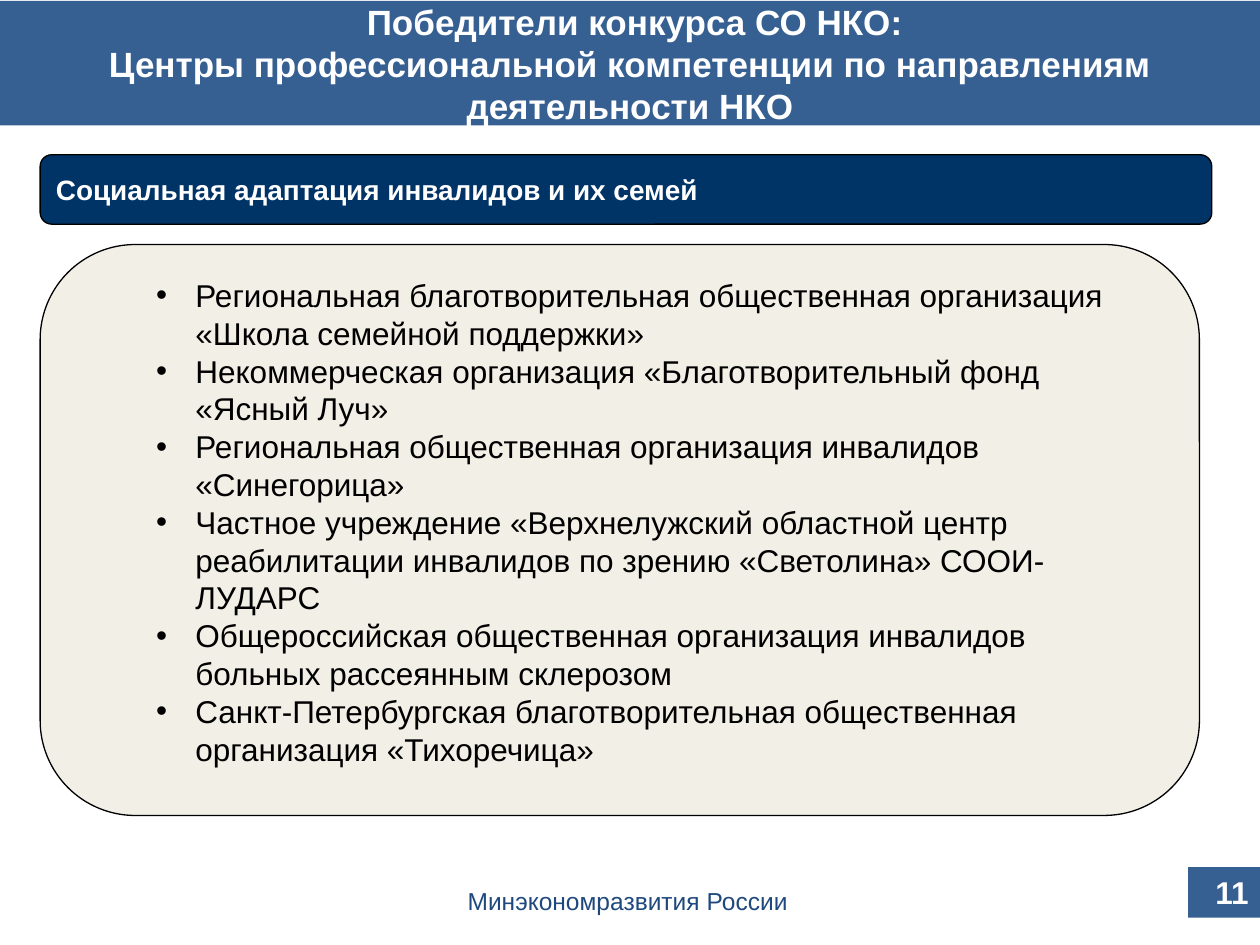
"""Build a slide listing the contest winners among non-profit organisations."""
import pptx
import pptx.dml.color
import pptx.enum.shapes
import pptx.enum.text
import pptx.oxml.ns
import pptx.util
from lxml import etree

Cm = pptx.util.Cm
SHAPES = pptx.enum.shapes.MSO_SHAPE
ALIGN = pptx.enum.text.PP_ALIGN
ANCHOR = pptx.enum.text.MSO_ANCHOR

BAND_BLUE = "376092"
TITLE = [
    " Победители конкурса СО НКО:",
    "Центры профессиональной компетенции по направлениям деятельности НКО",
]
WINNERS = [
    "Региональная благотворительная общественная организация «Школа семейной поддержки»",
    "Некоммерческая организация «Благотворительный фонд «Ясный Луч»",
    "Региональная общественная организация инвалидов «Синегорица»",
    "Частное учреждение «Верхнелужский областной центр реабилитации инвалидов "
    "по зрению «Светолина» СООИ-ЛУДАРС",
    "Общероссийская общественная организация инвалидов больных рассеянным склерозом",
    "Санкт-Петербургская благотворительная общественная организация «Тихоречица»",
]


def color(value):
    return pptx.dml.color.RGBColor.from_string(value)


def add_child(parent, tag, **attributes):
    return etree.SubElement(parent, pptx.oxml.ns.qn(tag), **attributes)


def add_bullet(para, indent):
    properties = para._p.get_or_add_pPr()
    properties.set("marL", str(indent))
    properties.set("indent", str(-indent))
    add_child(properties, "a:buFont", typeface="Arial")
    add_child(properties, "a:buChar", char="•")


def write(box, lines, size, ink, bold=False, align=ALIGN.LEFT, anchor=ANCHOR.MIDDLE, bullets=False):
    frame = box.text_frame
    frame.word_wrap = True
    frame.vertical_anchor = anchor
    font_format = {"name": "Arial", "size": pptx.util.Pt(size), "bold": bold}
    for number, line in enumerate(lines):
        para = frame.add_paragraph() if number else frame.paragraphs[0]
        para.alignment = align
        if bullets:
            add_bullet(para, Cm(0.79))
        span = para.add_run()
        span.text = line
        for name, value in font_format.items():
            setattr(span.font, name, value)
        span.font.color.rgb = color(ink)


def add_panel(page, kind, place, fill, outline=None, opacity=None):
    panel = page.shapes.add_shape(kind, *map(Cm, place))
    panel.shadow.inherit = False
    panel.fill.solid()
    panel.fill.fore_color.rgb = color(fill)
    if opacity:
        tint = panel._element.spPr.find(".//" + pptx.oxml.ns.qn("a:srgbClr"))
        add_child(tint, "a:alpha", val=str(opacity * 1000))
    if outline:
        panel.line.color.rgb = color(outline)
        panel.line.width = pptx.util.Pt(0.75)
    else:
        panel.line.fill.background()
    return panel


def add_text(page, place, lines, size, ink, **layout):
    box = page.shapes.add_textbox(*map(Cm, place))
    write(box, lines, size, ink, anchor=ANCHOR.TOP, **layout)


def main():
    deck = pptx.Presentation()
    deck.slide_width, deck.slide_height = Cm(25.4), Cm(19.05)
    page = deck.slides.add_slide(deck.slide_layouts[6])
    rounded = SHAPES.FLOWCHART_ALTERNATE_PROCESS

    topic = add_panel(page, rounded, (0.81, 3.12, 23.62, 1.4), "003366", "000000")
    write(topic, ["Социальная адаптация инвалидов и их семей"], 16, "FFFFFF", bold=True)

    add_panel(page, rounded, (0.81, 4.93, 23.37, 11.51), "EEECE1", "000000", opacity=81)
    add_text(page, (2.9, 5.44, 20.19, 11.02), WINNERS, 18, "000000", bullets=True)

    page_number = add_panel(page, SHAPES.RECTANGLE, (23.95, 17.48, 1.47, 1.02), BAND_BLUE)
    write(page_number, ["11"], 18, "FFFFFF", bold=True, align=ALIGN.RIGHT)
    add_text(page, (7.04, 17.73, 11.23, 1.02), ["Минэкономразвития России"], 14, "1F497D",
             align=ALIGN.CENTER)

    title = add_panel(page, SHAPES.RECTANGLE, (0, 0.02, 25.4, 2.51), BAND_BLUE)
    write(title, TITLE, 20, "FFFFFF", bold=True, align=ALIGN.CENTER)

    deck.save("out.pptx")


if __name__ == "__main__":
    main()
